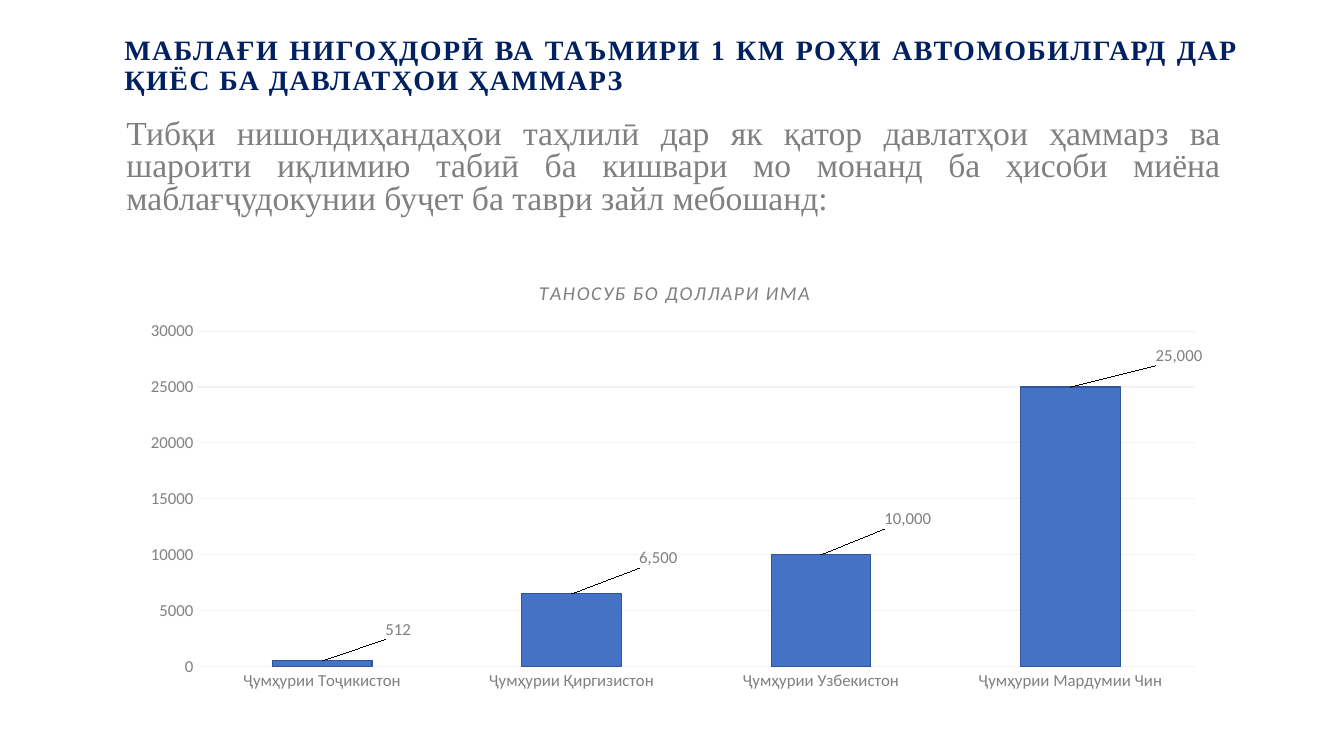
from dataclasses import dataclass

from lxml import etree
from pptx import Presentation
from pptx.chart.data import CategoryChartData
from pptx.dml.color import RGBColor
from pptx.enum.chart import XL_CHART_TYPE, XL_LABEL_POSITION, XL_TICK_MARK
from pptx.enum.text import MSO_ANCHOR, PP_ALIGN
from pptx.oxml.ns import qn
from pptx.util import Emu, Pt

EMU_PER_PX = 9525
COLUMN_CLUSTERED = XL_CHART_TYPE.COLUMN_CLUSTERED
OUTSIDE_END = XL_LABEL_POSITION.OUTSIDE_END
NO_TICK = XL_TICK_MARK.NONE
MIDDLE = MSO_ANCHOR.MIDDLE
BOTTOM = MSO_ANCHOR.BOTTOM
JUSTIFY = PP_ALIGN.JUSTIFY
NAVY = "002060"
GRAY = "808080"
GRID_GRAY = "F2F2F2"
BAR_BLUE = "4472C4"
BAR_EDGE = "2F5597"
SERIF = "Times New Roman"
SANS = "Calibri"


@dataclass(frozen=True)
class Box:
    left: int
    top: int
    width: int
    height: int

    def emu(self) -> tuple[Emu, ...]:
        return tuple(px(value) for value in (self.left, self.top, self.width, self.height))


@dataclass(frozen=True)
class TextBlock:
    box: Box
    text: str
    size: int
    color: str
    anchor: MSO_ANCHOR
    line_spacing: float
    space_before: int = 0
    bold: bool = False
    letter_spacing: int = 0


@dataclass(frozen=True)
class Country:
    name: str
    cost: int
    label_shift: tuple[float, float]


TEXT_BLOCKS = [
    TextBlock(
        Box(109, 21, 1080, 84),
        "МАБЛАҒИ НИГОҲДОРӢ ВА ТАЪМИРИ 1 КМ РОҲИ АВТОМОБИЛГАРД ДАР ҚИЁС БА ДАВЛАТҲОИ ҲАММАРЗ",
        20, NAVY, MIDDLE, 0.9, bold=True, letter_spacing=100,
    ),
    TextBlock(
        Box(111, 106, 1061, 105),
        "Тибқи нишондиҳандаҳои таҳлилӣ дар як қатор давлатҳои ҳаммарз ва шароити иқлимию "
        "табиӣ ба кишвари мо монанд ба ҳисоби миёна маблағҷудокунии буҷет ба таври зайл мебошанд:",
        24, GRAY, BOTTOM, 0.8, space_before=10,
    ),
]
CHART_BOX = Box(126, 249, 1033, 415)
CHART_TITLE = "ТАНОСУБ БО ДОЛЛАРИ ИМА"
COUNTRIES = [
    Country("Ҷумҳурии Тоҷикистон", 512, (0.07, -0.04)),
    Country("Ҷумҳурии Қиргизистон", 6500, (0.08, -0.05)),
    Country("Ҷумҳурии Узбекистон", 10000, (0.08, -0.05)),
    Country("Ҷумҳурии Мардумии Чин", 25000, (0.1, -0.04)),
]


def px(value: int) -> Emu:
    return Emu(value * EMU_PER_PX)


def rgb(color: str) -> RGBColor:
    return RGBColor.from_string(color)


def style_font(font, name: str, size: int, color: str) -> None:
    font.name = name
    font.size = Pt(size)
    font.color.rgb = rgb(color)


def space_letters(run, spacing: int) -> None:
    run.font._element.set("spc", str(spacing))


def add_text(slide, block: TextBlock) -> None:
    frame = slide.shapes.add_textbox(*block.box.emu()).text_frame
    frame.word_wrap = True
    frame.vertical_anchor = block.anchor
    paragraph = frame.paragraphs[0]
    paragraph.alignment = JUSTIFY
    paragraph.line_spacing = block.line_spacing
    paragraph.space_before = Pt(block.space_before)
    style_font(paragraph.font, SERIF, block.size, block.color)
    paragraph.font.bold = block.bold
    run = paragraph.add_run()
    run.text = block.text
    if block.letter_spacing:
        space_letters(run, block.letter_spacing)


def set_layout(parent, index: int, settings: dict[str, str | float]) -> None:
    for previous in parent.findall(qn("c:layout")):
        parent.remove(previous)
    layout = etree.Element(qn("c:layout"))
    manual = etree.SubElement(layout, qn("c:manualLayout"))
    for tag, value in settings.items():
        etree.SubElement(manual, qn(f"c:{tag}")).set("val", str(value))
    parent.insert(index, layout)


def style_axis(axis) -> None:
    axis.major_tick_mark = NO_TICK
    axis.minor_tick_mark = NO_TICK
    axis.format.line.fill.background()
    style_font(axis.tick_labels.font, SANS, 12, GRAY)


def style_title(chart) -> None:
    chart.has_title = True
    paragraph = chart.chart_title.text_frame.paragraphs[0]
    style_font(paragraph.font, SANS, 14, GRAY)
    paragraph.font.bold = False
    paragraph.font.italic = True
    run = paragraph.add_run()
    run.text = CHART_TITLE
    space_letters(run, 100)


def style_series(series) -> None:
    series.format.fill.solid()
    series.format.fill.fore_color.rgb = rgb(BAR_BLUE)
    series.format.line.color.rgb = rgb(BAR_EDGE)
    series.format.line.width = Pt(0.75)
    labels = series.data_labels
    labels.show_value = True
    labels.number_format = "#,##0"
    labels.number_format_is_linked = False
    labels.position = OUTSIDE_END
    style_font(labels.font, SANS, 12, GRAY)
    for index in range(len(COUNTRIES)):
        series.points[index].data_label.position = OUTSIDE_END


def add_cost_chart(slide) -> None:
    data = CategoryChartData(number_format="#,##0")
    data.categories = [country.name for country in COUNTRIES]
    data.add_series("Series 1", [country.cost for country in COUNTRIES])
    chart = slide.shapes.add_chart(COLUMN_CLUSTERED, *CHART_BOX.emu(), data).chart
    chart.has_legend = False
    style_font(chart.font, SANS, 12, GRAY)
    style_title(chart)
    style_axis(chart.category_axis)
    value_axis = chart.value_axis
    style_axis(value_axis)
    value_axis.minimum_scale = 0
    value_axis.maximum_scale = 30000
    value_axis.major_unit = 5000
    value_axis.tick_labels.number_format = "0"
    value_axis.tick_labels.number_format_is_linked = False
    grid_line = value_axis.major_gridlines.format.line
    grid_line.color.rgb = rgb(GRID_GRAY)
    grid_line.width = Pt(0.75)
    plot = chart.plots[0]
    plot.gap_width = 150
    plot.vary_by_categories = False
    style_series(plot.series[0])
    plot_area = next(chart.element.iter(qn("c:plotArea")))
    set_layout(plot_area, 0, {
        "layoutTarget": "inner", "xMode": "edge", "yMode": "edge",
        "x": 0.06, "y": 0.16, "w": 0.92, "h": 0.77,
    })
    for label, country in zip(chart.element.iter(qn("c:dLbl")), COUNTRIES):
        shift_x, shift_y = country.label_shift
        set_layout(label, 1, {"x": shift_x, "y": shift_y})


def main() -> None:
    presentation = Presentation()
    presentation.slide_width = px(1280)
    presentation.slide_height = px(720)
    slide = presentation.slides.add_slide(presentation.slide_layouts[6])
    for block in TEXT_BLOCKS:
        add_text(slide, block)
    add_cost_chart(slide)
    presentation.save("out.pptx")


if __name__ == "__main__":
    main()
